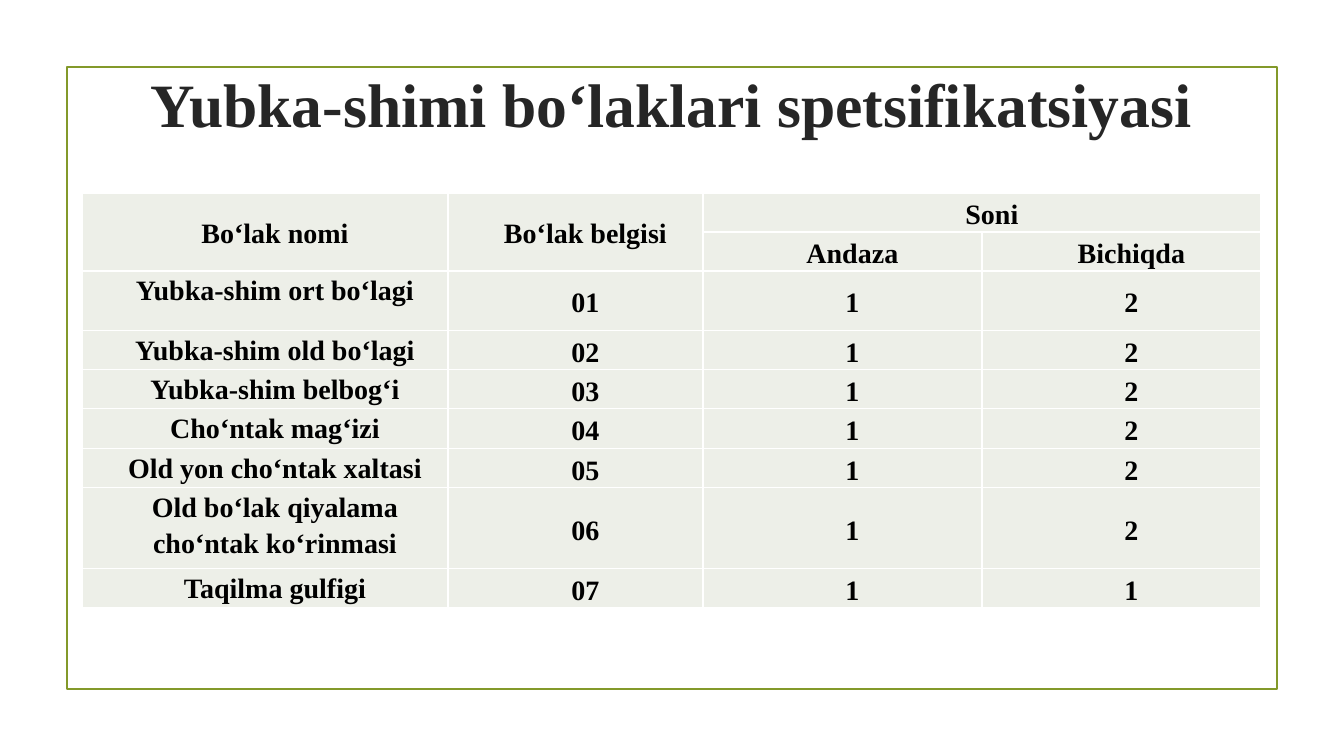
from lxml.etree import SubElement
from pptx import Presentation
from pptx.dml.color import RGBColor
from pptx.enum.shapes import MSO_SHAPE
from pptx.enum.text import MSO_ANCHOR, PP_ALIGN
from pptx.oxml.ns import qn
from pptx.util import Pt

FONT = "Times New Roman"
SCALE = 914400 / 100.8


def px(n):
    return round(n * SCALE)


def style(par, size, color):
    par.alignment = PP_ALIGN.CENTER
    par.font.name = FONT
    par.font.size = Pt(size)
    par.font.bold = True
    par.font.color.rgb = RGBColor.from_string(color)


deck = Presentation()
deck.slide_width, deck.slide_height = px(1344), px(756)
slide = deck.slides.add_slide(deck.slide_layouts[6])

# Frame
frame = slide.shapes.add_shape(MSO_SHAPE.RECTANGLE, px(67), px(67), px(1210), px(622))
frame.shadow.inherit = False
frame.fill.background()
frame.line.color.rgb = RGBColor.from_string("83992A")
frame.line.width = Pt(1.25)

# Title
title = slide.shapes.add_textbox(px(82), px(44), px(1179), px(101)).text_frame
title.word_wrap = True
title.vertical_anchor = MSO_ANCHOR.BOTTOM
title.text = "Yubka-shimi bo‘laklari spetsifikatsiyasi"
style(title.paragraphs[0], 44, "262626")

# Table data
parts = [
    ("Yubka-shim ort bo‘lagi", "2"),
    ("Yubka-shim old bo‘lagi", "2"),
    ("Yubka-shim belbog‘i", "2"),
    ("Cho‘ntak mag‘izi", "2"),
    ("Old yon cho‘ntak xaltasi", "2"),
    ("Old bo‘lak qiyalama cho‘ntak ko‘rinmasi", "2"),
    ("Taqilma gulfigi", "1"),
]
rows = [
    ("Bo‘lak nomi", "Bo‘lak belgisi", "Soni", ""),
    ("", "", "Andaza", "Bichiqda"),
]
for num, (name, count) in enumerate(parts, 1):
    rows.append((name, f"{num:02}", "1", count))

# Table grid
widths = [366, 255, 279, 279]
heights = [39, 39, 60, 39, 39, 40, 39, 81, 39]
table = slide.shapes.add_table(
    len(rows), len(widths), px(82), px(193), px(sum(widths)), px(sum(heights))
).table
table.first_row = table.horz_banding = False
for col, width in zip(table.columns, widths):
    col.width = px(width)
for row, height in zip(table.rows, heights):
    row.height = px(height)

# Heading spans
table.cell(0, 0).merge(table.cell(1, 0))
table.cell(0, 1).merge(table.cell(1, 1))
table.cell(0, 2).merge(table.cell(0, 3))

# Cells
for r, texts in enumerate(rows):
    for c, text in enumerate(texts):
        cell = table.cell(r, c)
        cell.margin_left = cell.margin_right = px(7)
        cell.margin_top = cell.margin_bottom = 0
        top = c == 0 and r > 1
        cell.vertical_anchor = MSO_ANCHOR.TOP if top else MSO_ANCHOR.MIDDLE

        # White borders come before the fill
        props = cell._tc.get_or_add_tcPr()
        for side in ("a:lnL", "a:lnR", "a:lnT", "a:lnB"):
            edge = SubElement(props, qn(side), w=str(Pt(1)))
            paint = SubElement(edge, qn("a:solidFill"))
            SubElement(paint, qn("a:srgbClr"), val="FFFFFF")
        cell.fill.solid()
        cell.fill.fore_color.rgb = RGBColor.from_string("EDEFE8")

        if text:
            cell.text = text
            par = cell.text_frame.paragraphs[0]
            par.line_spacing = 1.15
            par._p.get_or_add_pPr().set("marL", str(px(20)))
            style(par, 20, "000000")

deck.save("out.pptx")
